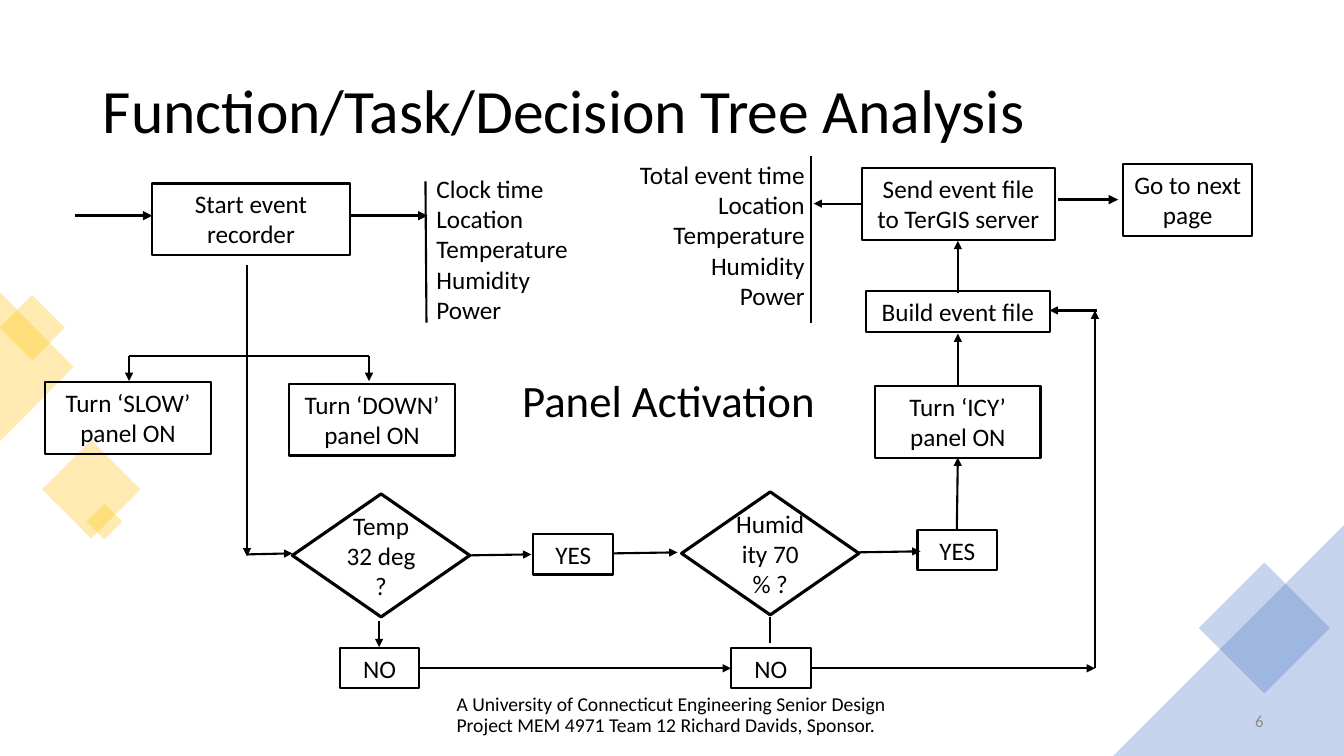
from pptx import Presentation
from pptx import util as u
from pptx.dml.color import RGBColor
from pptx.enum import shapes, text
from pptx.oxml import ns
from lxml import etree

BLACK = RGBColor(0x00, 0x00, 0x00)
GRAY = RGBColor(0x8C, 0x8C, 0x8C)
GOLD = RGBColor(0xFF, 0xC0, 0x00)
BLUE = RGBColor(0x44, 0x72, 0xC4)
LEFT, CENTER, RIGHT = text.PP_ALIGN.LEFT, text.PP_ALIGN.CENTER, text.PP_ALIGN.RIGHT
TOP, MIDDLE = text.MSO_ANCHOR.TOP, text.MSO_ANCHOR.MIDDLE
RECTANGLE = shapes.MSO_SHAPE.RECTANGLE
DECISION = shapes.MSO_SHAPE.FLOWCHART_DECISION


class Flowchart:
    font = "Calibri"
    size = 18
    thin, thick = 1.5, 2.25
    opacity = "30000"

    def __init__(self, page):
        self.page = page

    def set_text(self, frame, lines, size=size, color=BLACK, align=LEFT,
                 anchor=TOP, spacing=None, after=None):
        frame.word_wrap = True
        frame.vertical_anchor = anchor
        for index, line in enumerate(lines):
            para = frame.add_paragraph() if index else frame.paragraphs[0]
            para.alignment = align
            if spacing:
                para.line_spacing = spacing
            if after:
                para.space_after = u.Pt(after)
            span = para.add_run()
            span.text = line
            span.font.name = self.font
            span.font.size = u.Pt(size)
            span.font.color.rgb = color

    def title(self, line, area):
        box = self.page.shapes.title
        box.left, box.top, box.width, box.height = map(u.Inches, area)
        self.set_text(box.text_frame, [line], size=44, anchor=MIDDLE, spacing=0.9)

    def label(self, lines, area, **style):
        box = self.page.shapes.add_textbox(*map(u.Inches, area))
        self.set_text(box.text_frame, lines, **style)

    def step(self, line, area, kind=RECTANGLE, width=thin, anchor=TOP):
        box = self.page.shapes.add_shape(kind, *map(u.Inches, area))
        box.shadow.inherit = False
        box.fill.background()
        box.line.color.rgb = BLACK
        box.line.width = u.Pt(width)
        self.set_text(box.text_frame, [line], align=CENTER, anchor=anchor)

    def decision(self, line, left, top):
        self.step(line, (left, top, 1.76, 1.22), DECISION, self.thick, MIDDLE)

    def link(self, start, end, arrow=True, width=thin):
        link = self.page.shapes.add_connector(
            shapes.MSO_CONNECTOR.STRAIGHT, *map(u.Inches, start + end))
        link.line.color.rgb = BLACK
        link.line.width = u.Pt(width)
        properties = link.element.spPr
        if arrow:
            etree.SubElement(properties.find(ns.qn("a:ln")), ns.qn("a:tailEnd"), type="triangle")
        etree.SubElement(properties, ns.qn("a:effectLst"))

    def tint(self, shape, color):
        shape.shadow.inherit = False
        shape.fill.solid()
        shape.fill.fore_color.rgb = color
        for node in shape.element.spPr.iter(ns.qn("a:srgbClr")):
            etree.SubElement(node, ns.qn("a:alpha"), val=self.opacity)
        shape.line.fill.background()

    def tilted_square(self, left, top, side, color):
        square = self.page.shapes.add_shape(RECTANGLE, *map(u.Inches, (left, top, side, side)))
        square.rotation = 45
        self.tint(square, color)

    def corner(self, points, color):
        first, *others = [tuple(map(u.Inches, point)) for point in points]
        outline = self.page.shapes.build_freeform(*first)
        outline.add_line_segments(others)
        self.tint(outline.convert_to_shape(), color)


def main():
    deck = Presentation()
    deck.slide_width, deck.slide_height = u.Inches(13.33), u.Inches(7.5)
    chart = Flowchart(deck.slides.add_slide(deck.slide_layouts[5]))

    # Side decorations
    chart.corner([(0, 2.9), (0.73, 3.64), (0, 4.38)], GOLD)
    for left, top, side in [(0.09, 3.02, 0.46), (0.56, 4.51, 0.69), (0.91, 5.05, 0.25)]:
        chart.tilted_square(left, top, side, GOLD)
    chart.corner([(13.33, 5.21), (13.33, 7.5), (11.04, 7.5)], BLUE)
    chart.tilted_square(12.08, 5.77, 0.92, BLUE)

    # Title, section name and footer
    chart.title("Function/Task/Decision Tree Analysis", (0.92, 0.4, 11.5, 1.45))
    chart.label(["Panel Activation"], (5.08, 3.65, 3.34, 0.64), size=32)
    chart.label(["A University of Connecticut Engineering Senior Design "
                 "Project MEM 4971 Team 12 Richard Davids, Sponsor."],
                (4.43, 6.9, 4.78, 0.4), size=14, anchor=MIDDLE, spacing=0.9, after=6)
    chart.label(["6"], (10.84, 6.95, 1.79, 0.4), size=12, color=GRAY,
                align=RIGHT, anchor=MIDDLE, after=6)

    # Recorded values
    shared = ["Location", "Temperature", "Humidity", "Power"]
    chart.label(["Clock time"] + shared, (4.23, 1.67, 2.25, 1.62))
    chart.label(["Total event time"] + shared, (6.17, 1.53, 1.91, 1.62), align=RIGHT)

    # Steps: two-line boxes, then one-line boxes
    for line, left, top, width in [
        ("Start event recorder", 1.51, 1.82, 1.96),
        ("Turn ‘SLOW’ panel ON", 0.45, 3.79, 1.64),
        ("Turn ‘DOWN’ panel ON", 2.87, 3.81, 1.64),
        ("Turn ‘ICY’ panel ON", 8.68, 3.83, 1.64),
        ("Send event file to TerGIS server", 8.55, 1.67, 1.91),
        ("Go to next page", 11.14, 1.63, 1.28),
    ]:
        chart.step(line, (left, top, width, 0.71))
    for line, left, top, width in [
        ("Build event file", 8.59, 2.89, 1.82),
        ("YES", 5.29, 5.3, 0.79),
        ("YES", 9.1, 5.26, 0.79),
        ("NO", 3.37, 6.43, 0.79),
        ("NO", 7.25, 6.43, 0.79),
    ]:
        chart.step(line, (left, top, width, 0.4))
    chart.decision("Temp 32 deg ?", 2.9, 4.9)
    chart.decision("Humidity 70 % ?", 6.76, 4.88)

    # Plain lines
    for start, end in [
        ((1.28, 3.53), (3.66, 3.53)),
        ((2.45, 2.63), (2.45, 3.53)),
        ((4.22, 1.8), (4.23, 3.2)),
        ((8.04, 1.55), (8.04, 3.2)),
        ((7.64, 6.12), (7.64, 6.38)),
    ]:
        chart.link(start, end, arrow=False)

    # Heavy arrows of the top row
    for start, end in [
        ((0.74, 2.14), (1.51, 2.14)),
        ((3.47, 2.14), (4.24, 2.14)),
        ((10.49, 1.98), (11.09, 1.98)),
    ]:
        chart.link(start, end, width=chart.thick)

    # Flow arrows
    for start, end in [
        ((1.28, 3.53), (1.28, 3.78)),
        ((3.66, 3.53), (3.66, 3.78)),
        ((2.45, 3.53), (2.45, 5.52)),
        ((2.45, 5.5), (2.9, 5.49)),
        ((3.76, 6.16), (3.76, 6.42)),
        ((4.63, 5.51), (5.27, 5.5)),
        ((6.08, 5.49), (6.72, 5.48)),
        ((8.49, 5.48), (9.13, 5.47)),
        ((9.49, 5.26), (9.5, 4.54)),
        ((9.5, 3.83), (9.5, 3.31)),
        ((9.5, 2.91), (9.5, 2.39)),
        ((8.55, 2.02), (8.07, 2.02)),
        ((4.16, 6.63), (7.25, 6.63)),
        ((8.04, 6.63), (10.86, 6.63)),
        ((10.86, 6.63), (10.86, 3.08)),
        ((10.88, 3.08), (10.41, 3.08)),
    ]:
        chart.link(start, end)

    deck.save("out.pptx")


if __name__ == "__main__":
    main()
